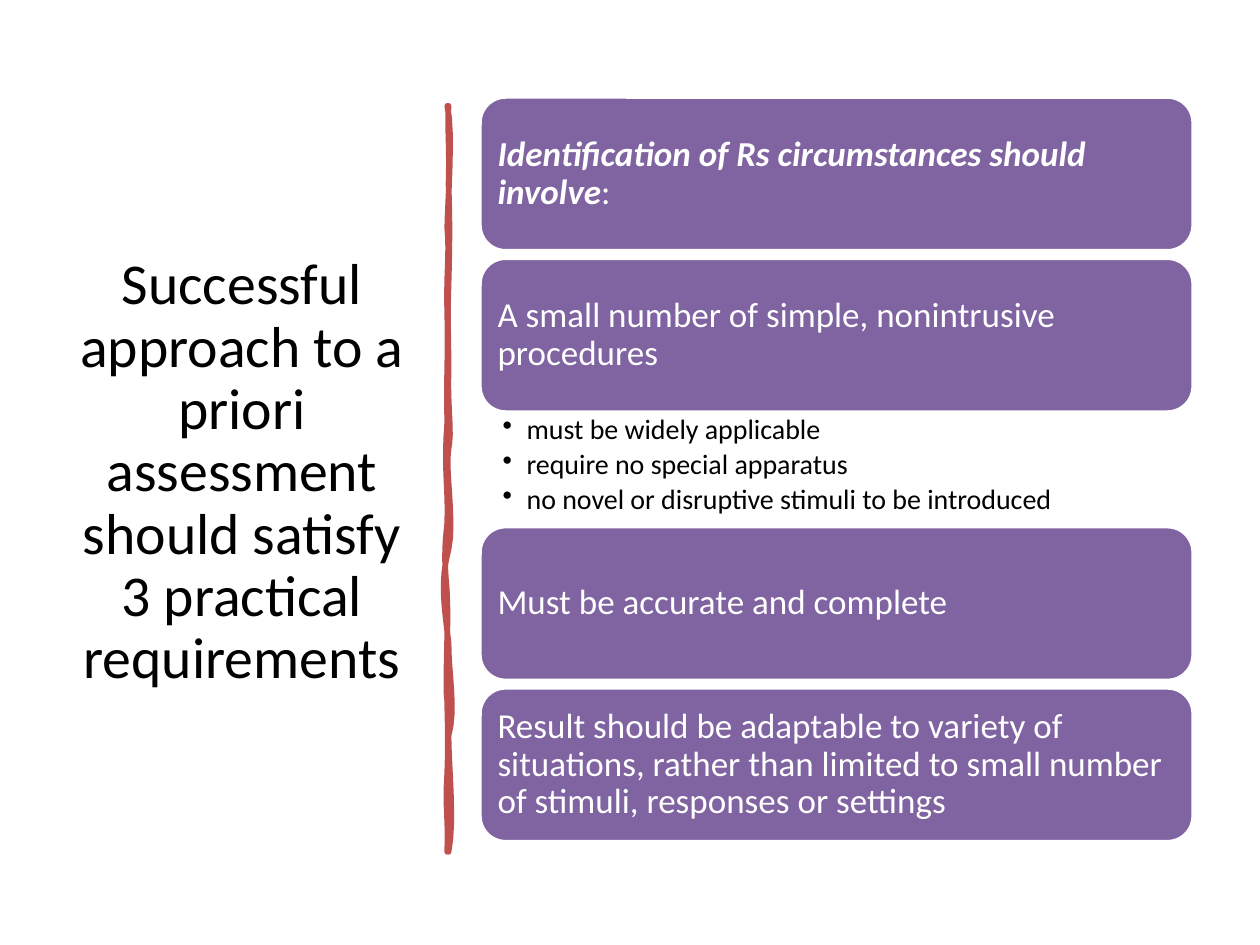
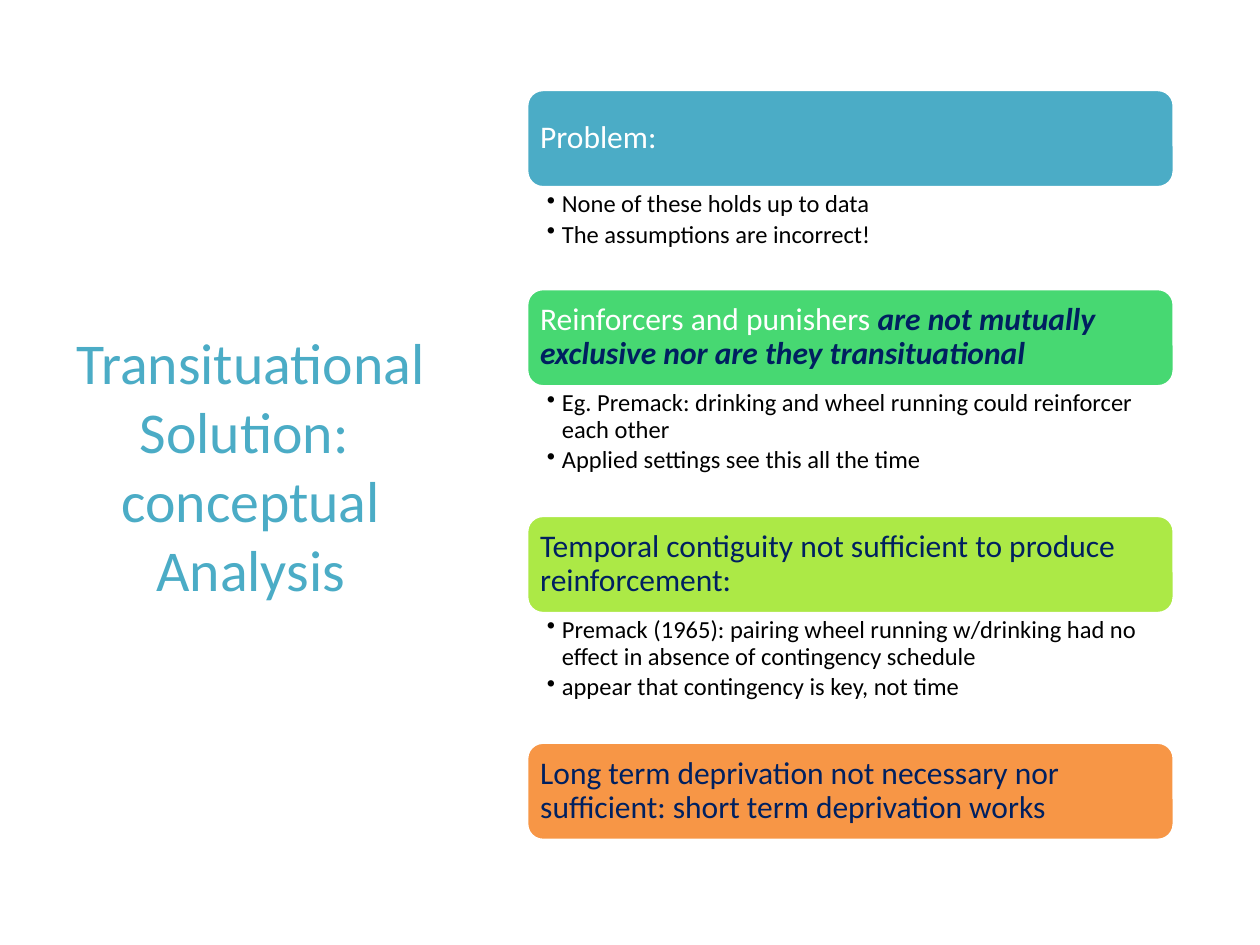
from dataclasses import dataclass

from lxml import etree
from pptx import Presentation
from pptx import util as u
from pptx.dml.color import RGBColor
from pptx.enum import shapes, text
from pptx.oxml.ns import qn

FONT = "Calibri"
WHITE, BLACK, NAVY = "FFFFFF", "000000", "002060"
PURPLE, RED, TEAL = "8064A2", "C0504D", "4BACC6"
GREEN, LIME, ORANGE = "47D872", "ACE946", "F79646"


@dataclass
class Phrase:
    words: str
    color: str = WHITE
    strong: bool = False


@dataclass
class Card:
    phrases: list[Phrase]
    fill: str = PURPLE
    bullets: tuple[str, ...] = ()
    space_below: float = 0.0


@dataclass
class Stack:
    left: float
    top: float
    width: float
    card_height: float
    card_size: int
    card_inset: float
    bullet_size: int
    bullet_insets: tuple[float, float]
    hanging: float
    cards: list[Card]


@dataclass
class Title:
    words: str
    box: tuple[float, float, float, float]
    color: str
    line_spacing: float


def rgb(hex_color: str) -> RGBColor:
    return RGBColor.from_string(hex_color)


def inches(values) -> list:
    return [u.Inches(value) for value in values]


def paint(shape, fill: str, line: str, weight: float) -> None:
    shape.shadow.inherit = False
    shape.fill.solid()
    shape.fill.fore_color.rgb = rgb(fill)
    shape.line.color.rgb = rgb(line)
    shape.line.width = u.Pt(weight)


def set_font(run, size: int, color: str, strong: bool = False) -> None:
    for name, value in {"name": FONT, "size": u.Pt(size), "bold": strong, "italic": strong}.items():
        setattr(run.font, name, value)
    run.font.color.rgb = rgb(color)


def set_frame(frame, anchor, across: tuple[float, float], upright: float) -> None:
    settings = {
        "word_wrap": True,
        "auto_size": text.MSO_AUTO_SIZE.NONE,
        "vertical_anchor": anchor,
        "margin_left": u.Inches(across[0]),
        "margin_right": u.Inches(across[1]),
        "margin_top": u.Inches(upright),
        "margin_bottom": u.Inches(upright),
    }
    for name, value in settings.items():
        setattr(frame, name, value)


def add_title_slide(deck, title: Title):
    slide = deck.slides.add_slide(deck.slide_layouts[5])
    heading = slide.shapes.title
    heading.left, heading.top, heading.width, heading.height = inches(title.box)
    set_frame(heading.text_frame, text.MSO_ANCHOR.MIDDLE, (0.1, 0.1), 0.05)
    paragraph = heading.text_frame.paragraphs[0]
    paragraph.text = title.words
    paragraph.alignment = text.PP_ALIGN.CENTER
    paragraph.line_spacing = title.line_spacing
    for run in paragraph.runs:
        set_font(run, 33, title.color)
    return slide


def add_card(slide, stack: Stack, card: Card, top: float) -> None:
    box = slide.shapes.add_shape(
        shapes.MSO_SHAPE.ROUNDED_RECTANGLE,
        *inches((stack.left, top, stack.width, stack.card_height)))
    paint(box, card.fill, WHITE, 2)
    inset = stack.card_inset
    set_frame(box.text_frame, text.MSO_ANCHOR.MIDDLE, (inset, inset), inset)
    paragraph = box.text_frame.paragraphs[0]
    paragraph.alignment = text.PP_ALIGN.LEFT
    paragraph.line_spacing = 0.9
    for phrase in card.phrases:
        run = paragraph.add_run()
        run.text = phrase.words
        set_font(run, stack.card_size, phrase.color, phrase.strong)


def add_bullets(slide, stack: Stack, card: Card, top: float) -> None:
    box = slide.shapes.add_textbox(*inches((stack.left, top, stack.width, card.space_below)))
    frame = box.text_frame
    set_frame(frame, text.MSO_ANCHOR.TOP, stack.bullet_insets, 0.03)
    for number, words in enumerate(card.bullets):
        paragraph = frame.add_paragraph() if number else frame.paragraphs[0]
        paragraph.line_spacing = 0.9
        paragraph.space_after = u.Pt(stack.bullet_size * 0.17)
        run = paragraph.add_run()
        run.text = words
        set_font(run, stack.bullet_size, BLACK)
        properties = paragraph._p.get_or_add_pPr()
        hanging = u.Inches(stack.hanging)
        properties.set("marL", str(hanging))
        properties.set("indent", str(-hanging))
        etree.SubElement(properties, qn("a:buChar")).set("char", "•")


def add_stack(slide, stack: Stack) -> None:
    top = stack.top
    for card in stack.cards:
        add_card(slide, stack, card, top)
        top += stack.card_height
        if card.bullets:
            add_bullets(slide, stack, card, top)
        top += card.space_below


# Hand-drawn divider: each curve is two control points and an end point
DIVIDER_START = (3.56, 0.84)
DIVIDER_CURVES = [
    (3.55, 1.03, 3.57, 1.16, 3.56, 1.46), (3.57, 1.74, 3.57, 1.91, 3.56, 2.26),
    (3.55, 2.58, 3.56, 2.62, 3.56, 2.94), (3.55, 3.25, 3.59, 3.42, 3.56, 3.56),
    (3.53, 3.72, 3.61, 4.14, 3.56, 4.36), (3.49, 4.62, 3.53, 4.83, 3.56, 5.1),
    (3.56, 5.35, 3.62, 5.63, 3.56, 5.84), (3.56, 6.06, 3.61, 6.53, 3.56, 6.76),
    (3.56, 6.75, 3.55, 6.76, 3.55, 6.76), (3.56, 6.45, 3.53, 6.44, 3.55, 6.13),
    (3.56, 5.83, 3.55, 5.7, 3.55, 5.57), (3.53, 5.46, 3.56, 4.94, 3.55, 4.77),
    (3.55, 4.62, 3.51, 4.47, 3.55, 4.15), (3.56, 3.86, 3.52, 3.73, 3.55, 3.35),
    (3.54, 3, 3.56, 2.79, 3.55, 2.5), (3.54, 2.16, 3.57, 2.03, 3.55, 1.81),
    (3.55, 1.65, 3.6, 1.04, 3.55, 0.84),
]


def trace_curves(start, curves, steps: int = 8) -> list:
    points = []
    for x1, y1, x2, y2, x3, y3 in curves:
        for step in range(1, steps + 1):
            t = step / steps
            weights = ((1 - t) ** 3, 3 * t * (1 - t) ** 2, 3 * t * t * (1 - t), t ** 3)
            points.append(tuple(
                u.Inches(sum(w * value for w, value in zip(weights, axis)))
                for axis in ((start[0], x1, x2, x3), (start[1], y1, y2, y3))))
        start = (x3, y3)
    return points


def add_divider(slide) -> None:
    builder = slide.shapes.build_freeform(*inches(DIVIDER_START))
    builder.add_line_segments(trace_curves(DIVIDER_START, DIVIDER_CURVES), close=True)
    divider = builder.convert_to_shape()
    paint(divider, RED, RED, 3.25)
    line = divider.line._get_or_add_ln()
    line.set("cap", "rnd")
    etree.SubElement(line, qn("a:round"))


# Content
REQUIREMENTS_TITLE = Title(
    "Successful approach to a priori assessment should satisfy 3 practical requirements",
    (0.52, 0.7, 2.8, 6.11), BLACK, 0.9)
REQUIREMENTS = Stack(
    3.81, 0.77, 5.66, 1.22, 20, 0.08, 16, (0.18, 0.16), 0.19,
    [
        Card([Phrase("Identification of Rs circumstances should involve", strong=True),
              Phrase(":")], space_below=0.06),
        Card([Phrase("A small number of simple, nonintrusive procedures")],
             bullets=("must be widely applicable", "require no special apparatus",
                      "no novel or disruptive stimuli to be introduced"),
             space_below=0.91),
        Card([Phrase("Must be accurate and complete")], space_below=0.06),
        Card([Phrase("Result should be adaptable to variety of situations, rather than "
                     "limited to small number of stimuli, responses or settings")]),
    ])

ANALYSIS_TITLE = Title("Transituational Solution: \vconceptual Analysis",
                       (0.43, 0.68, 3.12, 6.02), TEAL, 1.0)
ANALYSIS = Stack(
    4.18, 0.71, 5.14, 0.78, 18, 0.07, 14, (0.16, 0.14), 0.12,
    [
        Card([Phrase("Problem:")], TEAL,
             ("None of these holds up to data", "The assumptions are incorrect!"), 0.8),
        Card([Phrase("Reinforcers and punishers "),
              Phrase("are not mutually exclusive nor are they transituational", NAVY, True)],
             GREEN,
             ("Eg. Premack: drinking and wheel running could reinforcer each other",
              "Applied settings see this all the time"), 1.02),
        Card([Phrase("Temporal contiguity not sufficient to produce reinforcement:", NAVY)],
             LIME,
             ("Premack (1965): pairing wheel running w/drinking had no effect in absence "
              "of contingency schedule",
              "appear that contingency is key, not time"), 1.02),
        Card([Phrase("Long term deprivation not necessary nor sufficient: "
                     "short term deprivation works", NAVY)], ORANGE),
    ])


def main() -> None:
    deck = Presentation()
    deck.slide_width, deck.slide_height = inches((10, 7.5))

    # Practical requirements
    slide = add_title_slide(deck, REQUIREMENTS_TITLE)
    add_divider(slide)
    add_stack(slide, REQUIREMENTS)

    # Conceptual analysis
    add_stack(add_title_slide(deck, ANALYSIS_TITLE), ANALYSIS)

    deck.save("out.pptx")


if __name__ == "__main__":
    main()
